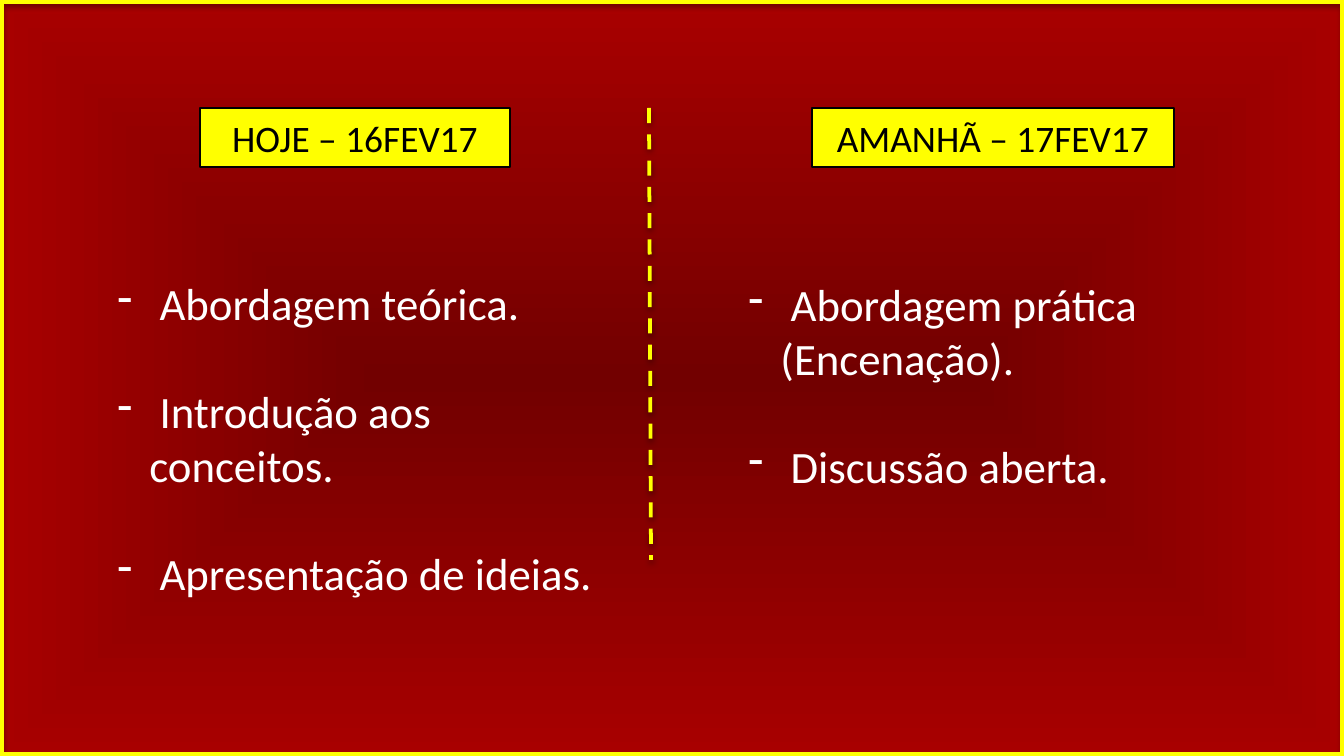
from lxml.etree import SubElement
from pptx import Presentation
from pptx.dml.color import RGBColor
from pptx.enum.dml import MSO_LINE
from pptx.enum.shapes import MSO_CONNECTOR, MSO_SHAPE
from pptx.enum.text import MSO_ANCHOR, MSO_AUTO_SIZE, PP_ALIGN
from pptx.oxml.ns import qn
from pptx.util import Emu, Pt

WIDTH, HEIGHT = 1344, 756
EMU_PER_PX = 9144000 / WIDTH
FONT = "Calibri"
YELLOW = RGBColor(0xFF, 0xFF, 0x00)
BLACK = RGBColor(0x00, 0x00, 0x00)
WHITE = RGBColor(0xFF, 0xFF, 0xFF)
DARK_RED = RGBColor(0x72, 0x00, 0x00)
RED = RGBColor(0xA8, 0x00, 0x00)
COMPARISON_LAYOUT = 4

# heading index, heading box, heading, list index, list box, items
COLUMNS = [
    (1, (200, 108, 310, 59), "HOJE – 16FEV17",
     2, (104, 269, 534, 285),
     ["Abordagem teórica.", "Introdução aos conceitos.", "Apresentação de ideias."]),
    (3, (812, 108, 362, 59), "AMANHÃ – 17FEV17",
     4, (735, 270, 609, 231),
     ["Abordagem prática (Encenação).", "Discussão aberta."]),
]


def px(value):
    return Emu(round(value * EMU_PER_PX))


def place(shape, box):
    shape.left, shape.top, shape.width, shape.height = map(px, box)


def style_line(line, color, points):
    line.color.rgb = color
    line.width = Pt(points)


def style_font(font, size, color):
    font.name = FONT
    font.size = Pt(size)
    font.bold = False
    font.color.rgb = color


def add_shadow(shape, opacity):
    """Give the shape a soft shadow straight below it."""
    effects = SubElement(shape.element.spPr, qn("a:effectLst"))
    shadow = SubElement(effects, qn("a:outerShdw"), blurRad=str(Pt(3.1)),
                        dist=str(Pt(1.7)), dir="5400000", rotWithShape="0")
    color = SubElement(shadow, qn("a:srgbClr"), val=str(BLACK))
    SubElement(color, qn("a:alpha"), val=str(opacity * 1000))


def paint_background(slide):
    """Fill with a gradient that runs from the centre to the edges."""
    fill = slide.background.fill
    fill.gradient()
    for stop, color in zip(fill.gradient_stops, (DARK_RED, RED)):
        stop.color.rgb = color
    gradient = slide.element.find(".//" + qn("a:gradFill"))
    gradient.remove(gradient.find(qn("a:lin")))
    shape_path = SubElement(gradient, qn("a:path"), path="shape")
    SubElement(shape_path, qn("a:fillToRect"), l="50000", t="50000", r="50000", b="50000")


def add_border(slide):
    border = slide.shapes.add_shape(MSO_SHAPE.RECTANGLE, 0, 0, px(WIDTH), px(HEIGHT))
    border.fill.background()
    style_line(border.line, YELLOW, 4.5)
    add_shadow(border, 35)


def add_divider(slide):
    divider = slide.shapes.add_connector(
        MSO_CONNECTOR.STRAIGHT, px(649), px(108), px(651), px(560))
    style_line(divider.line, YELLOW, 2)
    divider.line.dash_style = MSO_LINE.DASH
    add_shadow(divider, 38)


def fill_heading(heading, box, text):
    place(heading, box)
    heading.fill.solid()
    heading.fill.fore_color.rgb = YELLOW
    style_line(heading.line, BLACK, 1.5)
    frame = heading.text_frame
    frame.text = text
    frame.auto_size = MSO_AUTO_SIZE.NONE
    frame.vertical_anchor = MSO_ANCHOR.MIDDLE
    paragraph = frame.paragraphs[0]
    paragraph.alignment = PP_ALIGN.CENTER
    paragraph.space_before = Pt(0)
    style_font(paragraph.runs[0].font, 20, BLACK)


def fill_list(body, box, items):
    place(body, box)
    frame = body.text_frame
    frame.text = "\n".join(" " + item for item in items)
    frame.auto_size = MSO_AUTO_SIZE.NONE
    for index, paragraph in enumerate(frame.paragraphs):
        paragraph.space_before = Pt(29 if index else 0)
        properties = paragraph._p.get_or_add_pPr()
        properties.set("marL", str(px(32)))
        properties.set("indent", str(px(-32)))
        SubElement(properties, qn("a:buFontTx"))
        SubElement(properties, qn("a:buChar"), char="-")
        style_font(paragraph.runs[0].font, 24, WHITE)


def main():
    presentation = Presentation()
    presentation.slide_width, presentation.slide_height = px(WIDTH), px(HEIGHT)
    slide = presentation.slides.add_slide(presentation.slide_layouts[COMPARISON_LAYOUT])
    title = slide.shapes.title.element
    title.getparent().remove(title)
    paint_background(slide)
    add_border(slide)
    add_divider(slide)
    for heading_index, heading_box, heading, list_index, list_box, items in COLUMNS:
        fill_heading(slide.placeholders[heading_index], heading_box, heading)
        fill_list(slide.placeholders[list_index], list_box, items)
    presentation.save("out.pptx")


if __name__ == "__main__":
    main()
